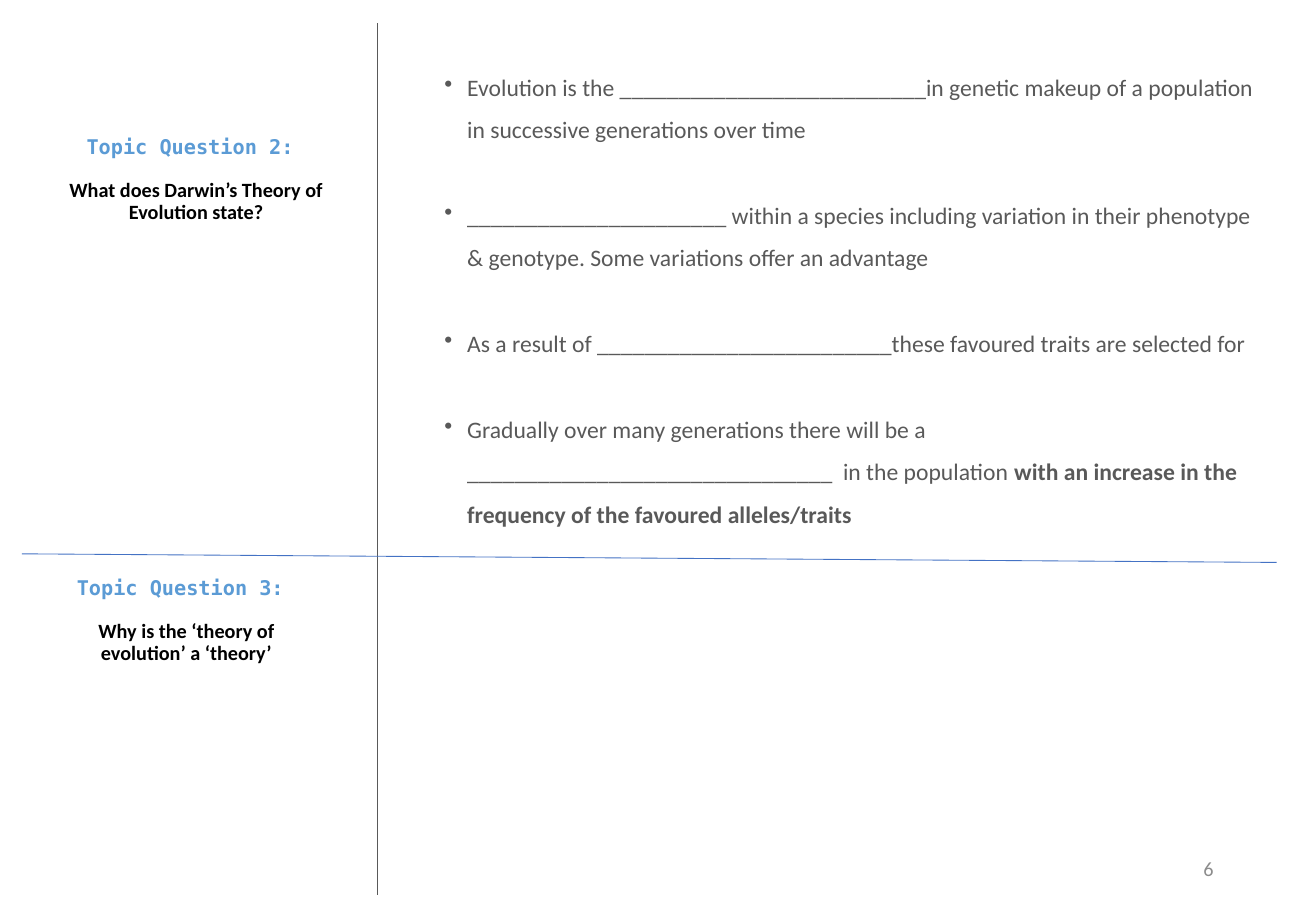
import pptx
import pptx.dml.color
import pptx.enum.shapes
import pptx.enum.text
import pptx.util
import lxml.etree

Pt = pptx.util.Pt
ALIGN = pptx.enum.text.PP_ALIGN
ANCHOR = pptx.enum.text.MSO_ANCHOR

SANS = "Calibri"
MONO = "DejaVu Sans Mono"
GREY = "595959"
BLUE = "4472C4"

TOPICS = [
    (31.7, 79.9, "Topic Question 2:\xa0".replace("\xa0", " "),
     "What does Darwin’s Theory of Evolution state?"),
    (25.9, 341.3, "Topic Question 3: ",
     "Why is the ‘theory of evolution’ a ‘theory’"),
]

NOTES = [
    [("Evolution is the " + "_" * 26 + "in genetic makeup of a population "
      "in successive generations over time", False)],
    [("_" * 22 + " within a species including variation in their phenotype "
      "& genotype. Some variations offer an advantage", False)],
    [("As a result of " + "_" * 25 + "these favoured traits are selected for",
      False)],
    [("Gradually over many generations there will be a " + "_" * 31 +
      "  in the population ", False),
     ("with an increase in the frequency of the favoured alleles/traits",
      True)],
]


def rgb(value):
    return pptx.dml.color.RGBColor.from_string(value)


def add_line(s, x1, y1, x2, y2, color):
    line = s.shapes.add_connector(
        pptx.enum.shapes.MSO_CONNECTOR.STRAIGHT, Pt(x1), Pt(y1), Pt(x2), Pt(y2))
    line.line.color.rgb = rgb(color)
    line.line.width = Pt(0.5)
    lxml.etree.SubElement(line._element.spPr, pptx.oxml.ns.qn("a:effectLst"))


def add_box(s, x, y, w, h, anchor):
    tf = s.shapes.add_textbox(Pt(x), Pt(y), Pt(w), Pt(h)).text_frame
    tf.word_wrap = True
    tf.vertical_anchor = anchor
    return tf


def format_paragraph(p, font, size, color, bold=None):
    p.font.name = font
    p.font.size = Pt(size)
    p.font.color.rgb = rgb(color)
    p.font.bold = bold


def add_bullet(p):
    pPr = p._p.get_or_add_pPr()
    pPr.set("marL", str(Pt(13.5)))
    pPr.set("indent", str(Pt(-13.5)))
    bullet = pptx.oxml.parse_xml(
        '<a:buChar xmlns:a="http://schemas.openxmlformats.org/drawingml/'
        '2006/main" char="•"/>')
    pPr.insert_element_before(bullet, "a:tabLst", "a:defRPr", "a:extLst")


def add_topic(s, x, y, heading, question):
    tf = add_box(s, x, y, 169.2, 54, ANCHOR.MIDDLE)
    p = tf.paragraphs[0]
    p.text = heading
    p.space_after = Pt(13)
    format_paragraph(p, MONO, 12, "5B9BD5", True)
    p = tf.add_paragraph()
    p.text = question
    format_paragraph(p, SANS, 12, "000000", True)
    for p in tf.paragraphs:
        p.alignment = ALIGN.CENTER
        p.line_spacing = 0.9


def add_notes(s):
    tf = add_box(s, 256.3, 31, 500.4, 284.4, ANCHOR.TOP)
    for i, runs in enumerate(NOTES):
        p = tf.add_paragraph() if i else tf.paragraphs[0]
        p.line_spacing = 1.5
        p.space_after = Pt(25.6 if i < len(NOTES) - 1 else 0)
        format_paragraph(p, SANS, 14, GREY)
        add_bullet(p)
        for text, bold in runs:
            r = p.add_run()
            r.text = text
            if bold:
                r.font.bold = True


def add_page_number(s, number):
    p = add_box(s, 550.8, 500.4, 175.7, 28.8, ANCHOR.MIDDLE).paragraphs[0]
    p.text = number
    p.alignment = ALIGN.RIGHT
    format_paragraph(p, SANS, 12, "8C8C8C")


def main():
    prs = pptx.Presentation()
    prs.slide_width, prs.slide_height = Pt(780), Pt(540)
    s = prs.slides.add_slide(prs.slide_layouts[6])
    add_line(s, 223.5, 13.7, 223.5, 530.6, GREY)
    add_line(s, 13, 328.3, 756.7, 333.4, BLUE)
    add_page_number(s, "6")
    for topic in TOPICS:
        add_topic(s, *topic)
    add_notes(s)
    prs.save("out.pptx")


if __name__ == "__main__":
    main()
